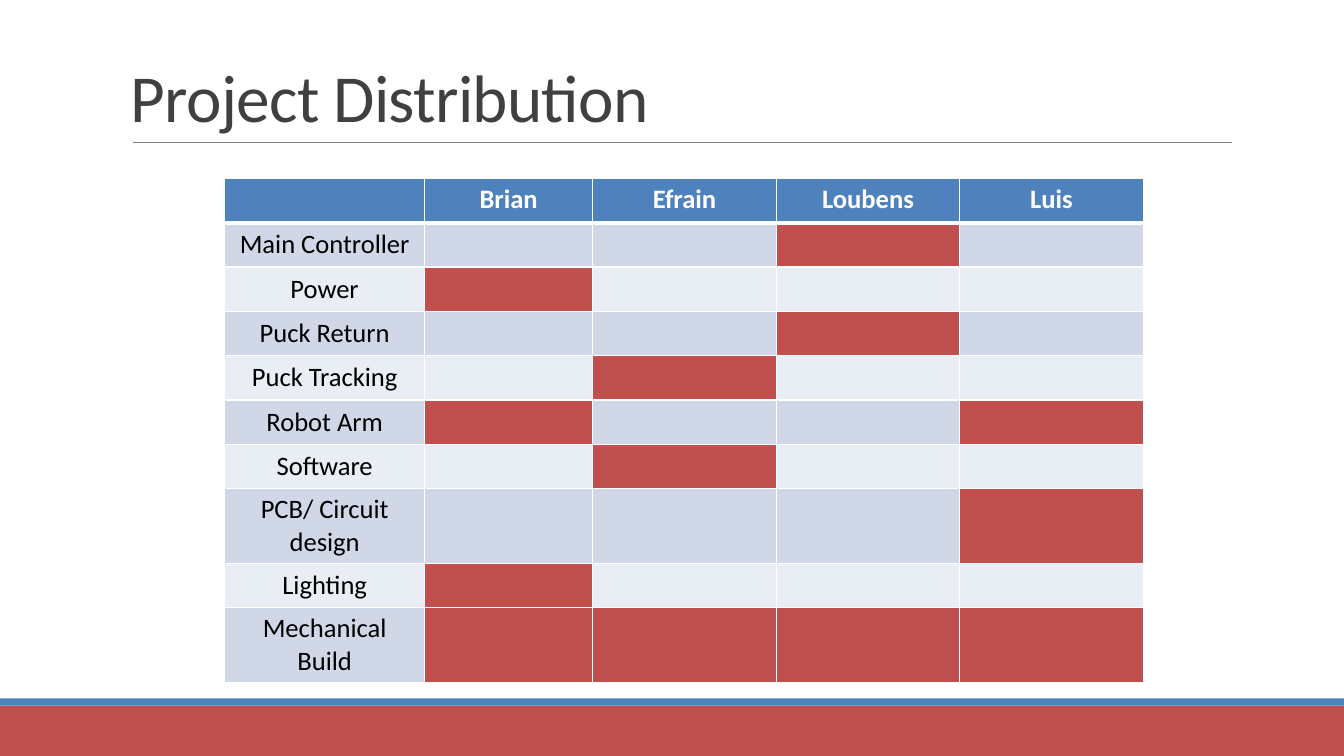
from lxml import etree
from pptx import Presentation
from pptx.dml.color import RGBColor
from pptx.enum.shapes import MSO_CONNECTOR, MSO_SHAPE
from pptx.enum.text import MSO_ANCHOR, PP_ALIGN
from pptx.oxml.ns import qn
from pptx.util import Inches, Pt

RECT, LINE = MSO_SHAPE.RECTANGLE, MSO_CONNECTOR.STRAIGHT
TOP, MIDDLE, BOTTOM = MSO_ANCHOR.TOP, MSO_ANCHOR.MIDDLE, MSO_ANCHOR.BOTTOM
LEFT, CENTER = PP_ALIGN.LEFT, PP_ALIGN.CENTER

RED = RGBColor(0xC0, 0x50, 0x4D)
BLUE = RGBColor(0x4F, 0x81, 0xBD)
BAND_DARK = RGBColor(0xD0, 0xD8, 0xE8)
BAND_LIGHT = RGBColor(0xE9, 0xED, 0xF4)
WHITE = RGBColor(0xFF, 0xFF, 0xFF)
BLACK = RGBColor(0, 0, 0)
GREY = RGBColor(0x80, 0x80, 0x80)
DARK = RGBColor(0x40, 0x40, 0x40)

FONT = "Calibri"
WIDTH, HEIGHT = Inches(13.33), Inches(7.5)
COLUMNS = [1.98, 1.67, 1.82, 1.82, 1.82]
ROW, TALL_ROW = 0.44, 0.74
MEMBERS = ["Brian", "Efrain", "Loubens", "Luis"]
TASKS = [
    ("Main Controller", ["Loubens"]),
    ("Power", ["Brian"]),
    ("Puck Return", ["Loubens"]),
    ("Puck Tracking", ["Efrain"]),
    ("Robot Arm", ["Brian", "Luis"]),
    ("Software", ["Efrain"]),
    ("PCB/ Circuit design", ["Luis"]),
    ("Lighting", ["Brian"]),
    ("Mechanical Build", MEMBERS),
]
TWO_LINE_TASKS = {"PCB/ Circuit design", "Mechanical Build"}


def write(tf, text, size=19, color=BLACK, bold=False, align=CENTER,
          anchor=TOP, line_spacing=None, spacing=None):
    tf.word_wrap = True
    tf.vertical_anchor = anchor
    p = tf.paragraphs[0]
    p.alignment = align
    p.line_spacing = line_spacing
    r = p.add_run()
    r.text = text
    r.font.name, r.font.size, r.font.bold = FONT, Pt(size), bold
    r.font.color.rgb = color
    if spacing is not None:
        r._r.get_or_add_rPr().set("spc", str(round(spacing * 100)))


def add_band(slide, top, height, color):
    sp = slide.shapes.add_shape(RECT, 0, Inches(top), WIDTH, Inches(height))
    sp.shadow.inherit = False
    sp.fill.solid()
    sp.fill.fore_color.rgb = color
    sp.line.fill.background()


def add_rule(slide, left, right, y):
    line = slide.shapes.add_connector(LINE, Inches(left), Inches(y), Inches(right), Inches(y))
    line.line.color.rgb = GREY
    line.line.width = Pt(0.5)
    etree.SubElement(line._element.spPr, qn("a:effectLst"))


def add_title(slide, text):
    box = slide.shapes.add_textbox(Inches(1.2), Inches(0.31), Inches(11), Inches(1.09))
    write(box.text_frame, text, size=48, color=DARK, align=LEFT,
          anchor=BOTTOM, line_spacing=0.85, spacing=-0.5)


def style_cell(cell, fill, top=1, bottom=1):
    cell.fill.solid()
    cell.fill.fore_color.rgb = fill
    tcPr = cell._tc.get_or_add_tcPr()
    sides = [("a:lnL", 1), ("a:lnR", 1), ("a:lnT", top), ("a:lnB", bottom)]
    for i, (tag, width) in enumerate(sides):
        ln = etree.Element(qn(tag), w=str(Pt(width)))
        solid = etree.SubElement(ln, qn("a:solidFill"))
        etree.SubElement(solid, qn("a:srgbClr"), val=str(WHITE))
        tcPr.insert(i, ln)


def add_distribution(slide):
    heights = [ROW] + [TALL_ROW if task in TWO_LINE_TASKS else ROW for task, _ in TASKS]
    frame = slide.shapes.add_table(len(heights), len(COLUMNS), Inches(2.23), Inches(1.77),
                                   Inches(sum(COLUMNS)), Inches(sum(heights)))
    table = frame.table
    for column, width in zip(table.columns, COLUMNS):
        column.width = Inches(width)
    for row, height in zip(table.rows, heights):
        row.height = Inches(height)

    style_cell(table.cell(0, 0), BLUE, bottom=3)
    for j, member in enumerate(MEMBERS, 1):
        cell = table.cell(0, j)
        style_cell(cell, BLUE, bottom=3)
        write(cell.text_frame, member, color=WHITE, bold=True)

    for i, (task, owners) in enumerate(TASKS, 1):
        band = BAND_DARK if i % 2 else BAND_LIGHT
        top = 3 if i == 1 else 1
        cell = table.cell(i, 0)
        style_cell(cell, band, top=top)
        write(cell.text_frame, task)
        cell.vertical_anchor = MIDDLE
        for j, member in enumerate(MEMBERS, 1):
            style_cell(table.cell(i, j), RED if member in owners else band, top=top)


def main():
    prs = Presentation()
    prs.slide_width, prs.slide_height = WIDTH, HEIGHT
    slide = prs.slides.add_slide(prs.slide_layouts[6])
    add_band(slide, 7, 0.5, RED)
    add_band(slide, 6.93, 0.07, BLUE)
    add_rule(slide, 1.32, 12.22, 1.41)
    add_title(slide, "Project Distribution")
    add_distribution(slide)
    prs.save("out.pptx")


if __name__ == "__main__":
    main()
